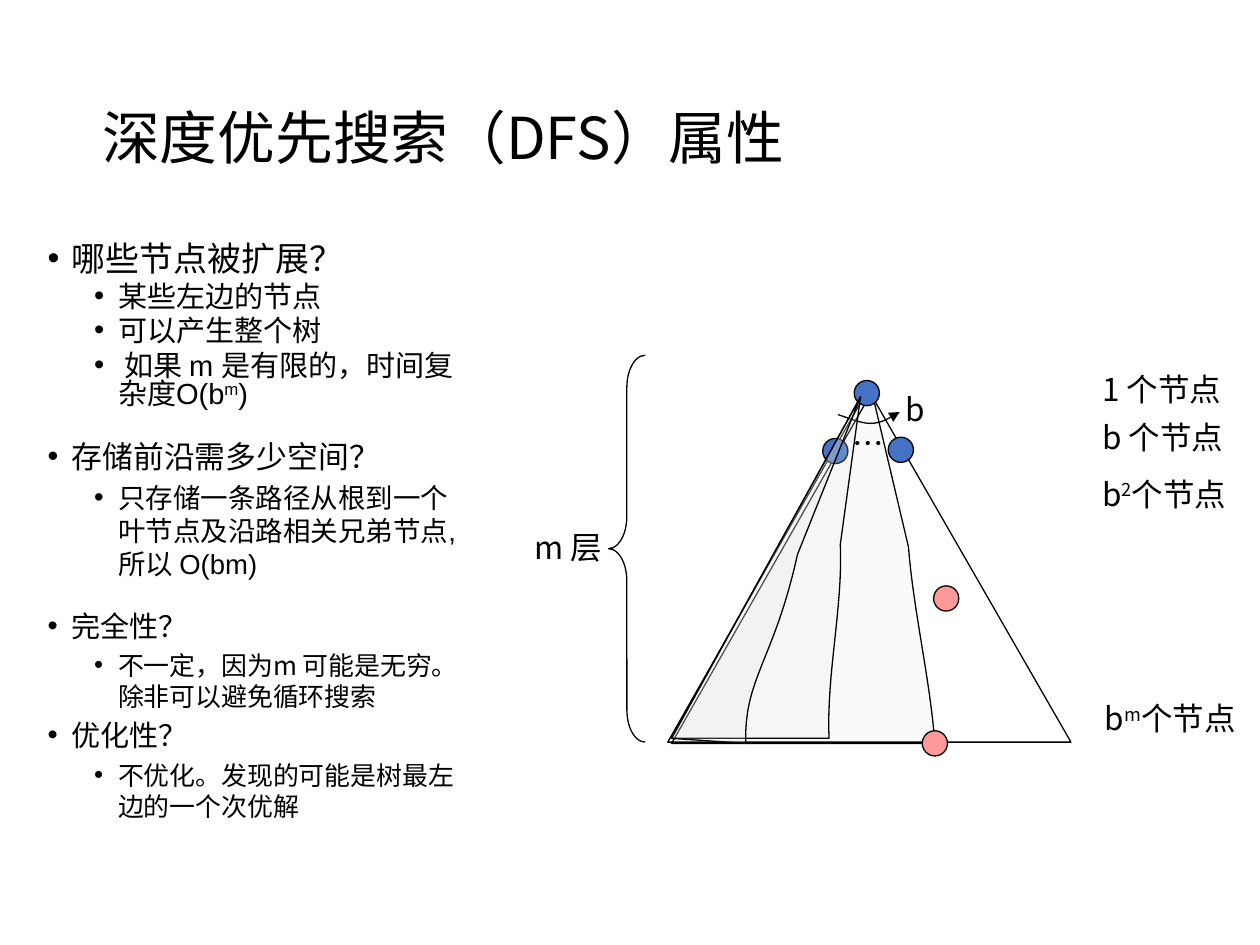
from pptx import Presentation
from pptx.dml.color import RGBColor
from pptx.enum.shapes import MSO_SHAPE as Shape
from pptx.enum.text import MSO_ANCHOR as Anchor, PP_ALIGN as Align
from pptx.oxml.ns import qn
from pptx.util import Emu, Pt
from lxml.etree import SubElement

EMU_PER_PX = 9144
CURVE_STEPS = 16
COLORS = {
    "ink": "000000",
    "node": "4472C4",
    "goal": "FF9999",
    "explored": "E7E6E6",
}
CJK = "Noto Sans CJK SC"
LATIN = "Arial"
BODY = [
    (0, "哪些节点被扩展？", 19.4, LATIN, 0.8, 7.5),
    (1, "某些左边的节点", 16.6, LATIN, 0.8, 3.8),
    (1, "可以产生整个树", 16.6, LATIN, 0.8, 3.8),
    (1, " 如果 m 是有限的，时间复杂度O(b^m^)", 16.6, LATIN, 0.8, 3.8),
    (0, "存储前沿需多少空间？", 17.6, LATIN, 0.8, 20),
    (1, "只存储一条路径从根到一个叶节点及沿路相关兄弟节点, 所以 O(bm)", 15.7, LATIN, 1, 3.8),
    (0, "完全性？", 16.6, CJK, 0.8, 20),
    (1, "不一定，因为m 可能是无穷。除非可以避免循环搜索", 14.8, CJK, 1, 3.8),
    (0, "优化性？", 16.6, CJK, 0.8, 7.5),
    (1, "不优化。发现的可能是树最左边的一个次优解", 14.8, CJK, 1, 3.8),
]


def px(value):
    return Emu(round(value * EMU_PER_PX))


def bezier(start, first, second, end):
    points = []
    for step in range(1, CURVE_STEPS + 1):
        t = step / CURVE_STEPS
        weights = ((1 - t) ** 3, 3 * t * (1 - t) ** 2, 3 * t * t * (1 - t), t ** 3)
        points.append(tuple(
            sum(weight * value for weight, value in zip(weights, values))
            for values in zip(start, first, second, end)
        ))
    return points


class SlideBuilder:
    def __init__(self, slide):
        self.slide = slide
        self.shapes = slide.shapes

    def color(self, name):
        return RGBColor.from_string(COLORS[name])

    def place(self, shape, left, top, width, height):
        shape.left, shape.top = px(left), px(top)
        shape.width, shape.height = px(width), px(height)

    def set_text(self, paragraph, text, size, font=CJK):
        base, *pieces = text.split("^")
        paragraph.text = base
        for piece in pieces:
            paragraph.add_run().text = piece
        for index, run in enumerate(paragraph.runs):
            run.font.size = Pt(size)
            run.font.name = font
            run.font.color.rgb = self.color("ink")
            properties = run._r.get_or_add_rPr()
            properties.find(qn("a:latin")).addnext(
                SubElement(properties, qn("a:ea"), typeface=CJK))
            if index % 2:
                properties.set("baseline", "30000")

    def title(self, text, box):
        shape = self.shapes.title
        self.place(shape, *box)
        shape.text_frame.vertical_anchor = Anchor.MIDDLE
        paragraph = shape.text_frame.paragraphs[0]
        self.set_text(paragraph, text, 33)
        paragraph.alignment = Align.LEFT
        paragraph.line_spacing = 0.9

    def textbox(self, box):
        shape = self.shapes.add_textbox(*map(px, box))
        shape.text_frame.word_wrap = True
        return shape.text_frame

    def label(self, text, box):
        self.set_text(self.textbox(box).paragraphs[0], text, 18)

    def bullets(self, rows, box):
        frame = self.textbox(box)
        for index, (level, text, size, font, spacing, before) in enumerate(rows):
            paragraph = frame.add_paragraph() if index else frame.paragraphs[0]
            self.set_text(paragraph, text, size, font)
            paragraph.level = level
            paragraph.line_spacing = float(spacing)
            paragraph.space_before = Pt(before)
            properties = paragraph._p.get_or_add_pPr()
            properties.set("marL", str(px(19 + 37 * level)))
            properties.set("indent", str(px(-19)))
            SubElement(properties, qn("a:buFont"), typeface=LATIN)
            SubElement(properties, qn("a:buChar"), char="•")

    def outline(self, shape, fill=None):
        shape.shadow.inherit = False
        shape.line.color.rgb = self.color("ink")
        shape.line.width = Pt(0.75)
        if fill:
            shape.fill.solid()
            shape.fill.fore_color.rgb = self.color(fill)
        else:
            shape.fill.background()

    def node(self, left, top, fill):
        shape = self.shapes.add_shape(Shape.OVAL, *map(px, (left, top, 20, 20)))
        self.outline(shape, fill)

    def brace(self, box):
        shape = self.shapes.add_shape(Shape.LEFT_BRACE, *map(px, box))
        shape.adjustments[0] = 0.884
        shape.adjustments[1] = 0.5
        self.outline(shape)

    def freeform(self, points, fill=None, close=True):
        start, *rest = [(px(x), px(y)) for x, y in points]
        builder = self.shapes.build_freeform(*start)
        builder.add_line_segments(rest, close=close)
        shape = builder.convert_to_shape()
        self.outline(shape, fill)
        return shape

    def explored(self, corner, base, first, second, bend, apex):
        points = [corner, base, *bezier(base, first, second, bend), apex]
        shape = self.freeform(points, "explored")
        color = shape._element.spPr.find(qn("a:solidFill"))[0]
        SubElement(color, qn("a:alpha"), val="20000")

    def arc_arrow(self, start, *curves):
        points = [start]
        for curve in curves:
            points += bezier(points[-1], *curve)
        shape = self.freeform(points, close=False)
        line = shape._element.spPr.find(qn("a:ln"))
        SubElement(line, qn("a:tailEnd"), type="triangle")


def main():
    presentation = Presentation()
    presentation.slide_width, presentation.slide_height = px(1000), px(750)
    builder = SlideBuilder(presentation.slides.add_slide(presentation.slide_layouts[5]))

    builder.title("深度优先搜索（DFS）属性", (71, 58, 900, 108))
    builder.bullets(BODY, (28, 190, 357, 517))

    builder.explored((533, 590), (742, 590), (738, 538), (725, 485), (721, 434), (692, 311))
    builder.freeform([(530, 589), (850, 589), (689, 309)])
    for left, top in ((678, 302), (653, 348), (705, 347)):
        builder.node(left, top, "node")
    builder.label("…", (667, 332, 30, 40))
    builder.arc_arrow(
        (665, 329),
        ((674, 332), (683, 336), (691, 336)),
        ((700, 336), (707, 331), (714, 327)),
    )
    builder.label("b", (709, 305, 33, 40))

    for text, top in (("1 个节点", 289), ("b 个节点", 327), ("b^2^个节点", 372)):
        builder.label(text, (865, top, 122, 40))
    builder.label("b^m^个节点", (867, 550, 160, 40))

    builder.node(732, 580, "goal")
    builder.brace((483, 282, 29, 307))
    builder.label("m 层", (414, 414, 138, 40))
    builder.explored((533, 586), (658, 586), (656, 534), (669, 483), (667, 432), (683, 315))
    builder.explored((533, 586), (592, 590), (590, 539), (615, 523), (633, 440), (683, 315))
    builder.node(741, 465, "goal")

    presentation.save("out.pptx")


if __name__ == "__main__":
    main()
